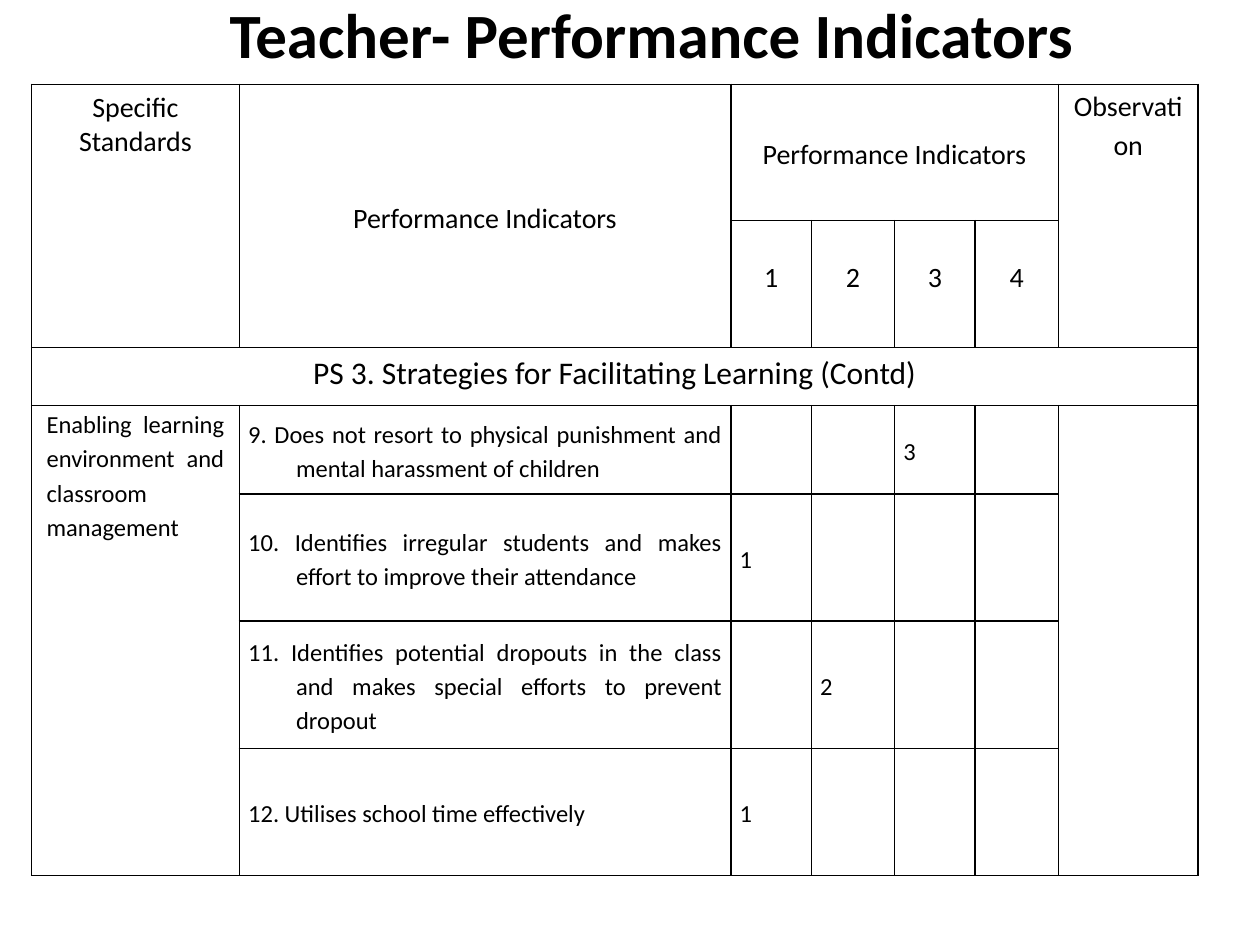
import pptx
import pptx.dml.color
import pptx.enum.text
import pptx.oxml
import pptx.oxml.ns
import pptx.util

ALIGN = pptx.enum.text.PP_ALIGN
ANCHOR = pptx.enum.text.MSO_ANCHOR
BLACK = pptx.dml.color.RGBColor(0x00, 0x00, 0x00)
FONT = "Calibri"

SLIDE_W, SLIDE_H = 10, 7.5
TITLE_BOX = (0.67, 0, 9, 0.53)
TABLE_BOX = (0.25, 0.67, 9.26, 6.28)

# Column and row weights, shared out over the table box
COLS = [1.65, 3.9, 0.64, 0.66, 0.64, 0.66, 1.11]
ROWS = [1.08, 1.01, 0.46, 0.7, 1.01, 1.01, 1.01]

# Merged areas: top row, left column, bottom row, right column
SPANS = [(0, 0, 1, 0), (0, 1, 1, 1), (0, 2, 0, 5), (0, 6, 1, 6),
         (2, 0, 2, 6), (3, 0, 6, 0), (3, 6, 6, 6)]

# Cell margins: left, top, right, bottom
PLAIN = (0.1, 0.05, 0.1, 0.05)
NARROW = (0.07, 0, 0.07, 0)
WIDE = (0.12, 0, 0.12, 0)
LOWERED = (0.1, 0.32, 0.1, 0.05)

# Each indicator with its rating
INDICATORS = [
    ("9. Does not resort to physical punishment and mental harassment of children", 3),
    ("10. Identifies irregular students and makes effort to improve their attendance", 1),
    ("11. Identifies potential dropouts in the class and makes special efforts to prevent dropout", 2),
    ("12. Utilises school time effectively", 1),
]


def set_attrs(obj, values):
    for name, value in values.items():
        setattr(obj, name, value)


def write(tf, text, size, para, bold=False):
    p = tf.paragraphs[0]
    set_attrs(p, para)
    r = p.add_run()
    r.text = text
    set_attrs(r.font, {"name": FONT, "size": pptx.util.Pt(size), "bold": bold})
    r.font.color.rgb = BLACK
    return p


def set_margins(obj, margins):
    sides = ("left", "top", "right", "bottom")
    set_attrs(obj, {f"margin_{side}": pptx.util.Inches(m)
                    for side, m in zip(sides, margins)})


def add_borders(cell):
    tc_pr = cell._tc.get_or_add_tcPr()
    for i, side in enumerate("LRTB"):
        tc_pr.insert(i, pptx.oxml.parse_xml(
            f'<a:ln{side} {pptx.oxml.ns.nsdecls("a")} w="12700">'
            f'<a:solidFill><a:srgbClr val="{BLACK}"/></a:solidFill></a:ln{side}>'))


def fill_cell(cell, text, size, align, margins=PLAIN, anchor=ANCHOR.TOP,
              spacing=None, hanging=0):
    set_margins(cell, margins)
    cell.vertical_anchor = anchor
    p = write(cell.text_frame, text, size,
              {"alignment": align, "line_spacing": spacing})
    if hanging:
        p_pr = p._p.get_or_add_pPr()
        p_pr.set("marL", str(pptx.util.Inches(hanging)))
        p_pr.set("indent", str(-pptx.util.Inches(hanging)))


def add_title(slide, box):
    sp = slide.shapes.add_textbox(*map(pptx.util.Inches, box))
    tf = sp.text_frame
    set_attrs(tf, {"word_wrap": True, "vertical_anchor": ANCHOR.MIDDLE})
    set_margins(tf, PLAIN)
    write(tf, "Teacher- Performance Indicators", 36,
          {"alignment": ALIGN.CENTER}, bold=True)


def add_grid(slide, box):
    width, height = box[2:]
    table = slide.shapes.add_table(len(ROWS), len(COLS),
                                   *map(pptx.util.Inches, box)).table
    set_attrs(table, {"first_row": False, "horz_banding": False})
    for col, weight in zip(table.columns, COLS):
        col.width = pptx.util.Inches(width * weight / sum(COLS))
    for row, weight in zip(table.rows, ROWS):
        row.height = pptx.util.Inches(height * weight / sum(ROWS))
    for cell in table.iter_cells():
        cell.fill.background()
        add_borders(cell)
    for top, left, bottom, right in SPANS:
        table.cell(top, left).merge(table.cell(bottom, right))
    return table


def add_indicator_table(slide, box):
    table = add_grid(slide, box)
    middle = {"margins": NARROW, "anchor": ANCHOR.MIDDLE, "spacing": 1.15}

    # Heading rows
    fill_cell(table.cell(0, 0), "Specific Standards", 16, ALIGN.CENTER)
    for col in (1, 2):
        fill_cell(table.cell(0, col), "Performance Indicators", 16,
                  ALIGN.CENTER, **middle)
    fill_cell(table.cell(0, 6), "Observation", 16, ALIGN.CENTER, WIDE, spacing=1.15)
    for rating in range(1, 5):
        fill_cell(table.cell(1, 1 + rating), str(rating), 16, ALIGN.CENTER, LOWERED)

    # Section row and standard
    fill_cell(table.cell(2, 0), "PS 3. Strategies for Facilitating Learning (Contd)",
              18, ALIGN.CENTER)
    fill_cell(table.cell(3, 0), "Enabling learning environment and classroom management",
              14, ALIGN.JUSTIFY, WIDE, spacing=1.15)

    # Indicators, each rating placed in its own column
    for row, (text, rating) in enumerate(INDICATORS, start=3):
        fill_cell(table.cell(row, 1), text, 14, ALIGN.JUSTIFY, hanging=0.38, **middle)
        fill_cell(table.cell(row, 1 + rating), str(rating), 14, ALIGN.LEFT, **middle)


def main():
    prs = pptx.Presentation()
    set_attrs(prs, {"slide_width": pptx.util.Inches(SLIDE_W),
                    "slide_height": pptx.util.Inches(SLIDE_H)})
    slide = prs.slides.add_slide(prs.slide_layouts[6])
    add_title(slide, TITLE_BOX)
    add_indicator_table(slide, TABLE_BOX)
    prs.save("out.pptx")


if __name__ == "__main__":
    main()
